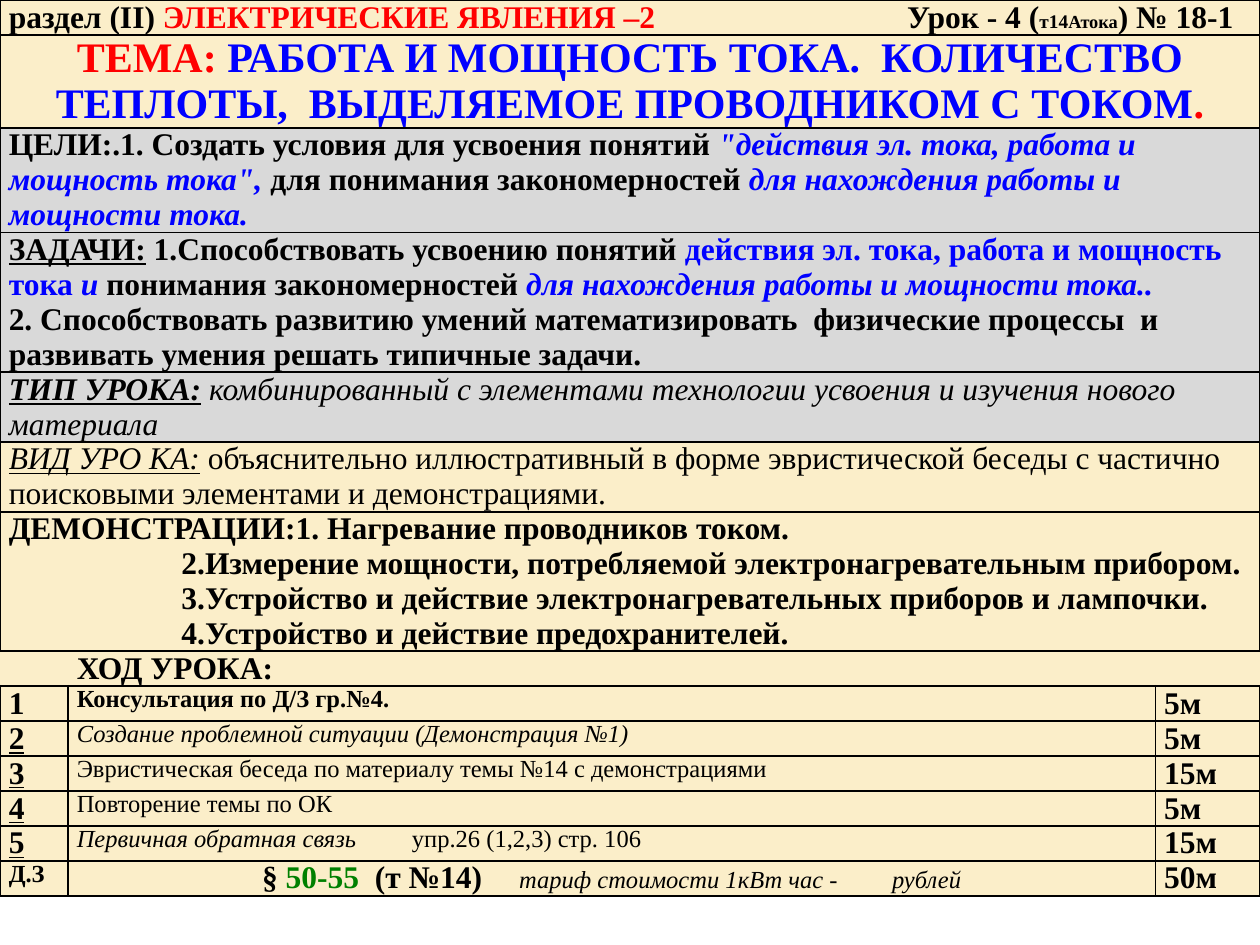
from dataclasses import dataclass

from lxml import etree
from pptx import Presentation
from pptx.dml.color import RGBColor
from pptx.enum.text import PP_ALIGN
from pptx.oxml.ns import qn
from pptx.util import Inches, Pt

CENTER = PP_ALIGN.CENTER
NO_STYLE = "{2D5ABB26-0587-4C30-8999-92F81FD0307C}"


@dataclass(frozen=True)
class Theme:
    font: str = "Times New Roman"
    black: str = "000000"
    red: str = "FF0000"
    blue: str = "0000FF"
    green: str = "008000"
    cream: str = "FBEEC9"
    gray: str = "D9D9D9"
    title: float = 24
    body: float = 18
    step: float = 14
    note: float = 11
    small_note: float = 10.5
    thin: float = 1
    thick: float = 1.5


THEME = Theme()
THIN, THICK = THEME.thin, THEME.thick
COLUMNS = (0.54, 8.63, 0.83)
LINE_HEIGHT = 0.18

BLUE = dict(color=THEME.blue)
BLUE_ITALIC = dict(color=THEME.blue, italic=True)
PLAIN = dict(bold=False)
ITALIC = dict(bold=False, italic=True)
STEP = dict(size=THEME.step, bold=False)
STEP_ITALIC = dict(size=THEME.step, bold=False, italic=True)
UNDERLINE = dict(underline=True)

# A paragraph is (spans, layout); a span is (text, format).
HEADER = [([("раздел (II) ", {}), ("ЭЛЕКТРИЧЕСКИЕ ЯВЛЕНИЯ –2", dict(color=THEME.red)),
            ("\tУрок - 4 (", {}), ("т14", dict(size=THEME.note)),
            (" Атока", dict(size=THEME.small_note)), (") № 18-1", {})], dict(tabs=(7.13,)))]
# The second note keeps its own type size, so it is a separate span.
HEADER[0][0][4] = (" Атока".replace(" А", "А", 1), dict(size=THEME.small_note))
TOPIC = [([("ТЕМА: ", dict(size=THEME.title, color=THEME.red)),
           ("РАБОТА И МОЩНОСТЬ ТОКА.  КОЛИЧЕСТВО ТЕПЛОТЫ,  ВЫДЕЛЯЕМОЕ ПРОВОДНИКОМ С ТОКОМ",
            dict(size=THEME.title, color=THEME.blue)),
           (".", dict(size=THEME.title, color=THEME.red))], dict(align=CENTER))]
GOALS = [([("ЦЕЛИ:.1. Создать условия для усвоения понятий ", {}),
           ("\"действия эл. тока, работа и мощность тока\", ", BLUE_ITALIC),
           ("для понимания закономерностей ", {}),
           ("для нахождения работы и мощности тока.", BLUE_ITALIC)], {})]
TASKS = [([("ЗАДАЧИ:", UNDERLINE), (" 1.Способствовать усвоению понятий ", {}),
           ("действия эл. тока, работа и мощность тока", BLUE), (" и ", BLUE_ITALIC),
           ("понимания закономерностей", {}),
           (" для нахождения работы и мощности тока..", BLUE_ITALIC)], {}),
         ([("2. Способствовать развитию умений математизировать  физические процессы  и "
            "развивать умения решать типичные задачи.", {})], {})]
LESSON_TYPE = [([("ТИП УРОКА:", dict(italic=True, underline=True)),
                 (" комбинированный с элементами технологии усвоения и изучения нового "
                  "материала", ITALIC)], {})]
LESSON_FORM = [([("ВИД УРО КА:", dict(bold=False, italic=True, underline=True)),
                 (" объяснительно иллюстративный в форме эвристической беседы с частично "
                  "поисковыми элементами и демонстрациями.", PLAIN)], {})]
DEMOS = [([("ДЕМОНСТРАЦИИ:1. Нагревание проводников током.", {})], {})] + [
    ([(text, {})], dict(indent=1.37)) for text in (
        "2.Измерение мощности, потребляемой электронагревательным прибором.",
        "3.Устройство и действие электронагревательных приборов и лампочки.",
        "4.Устройство и действие предохранителей.")]

# Full-width rows: paragraphs, lines, fill, side, top and bottom border.
SECTIONS = [
    (HEADER, 1, THEME.cream, THIN, THIN, THICK),
    (TOPIC, 2, THEME.cream, THICK, THICK, THICK),
    (GOALS, 3, THEME.gray, THIN, THICK, THIN),
    (TASKS, 4, THEME.gray, THIN, THIN, THIN),
    (LESSON_TYPE, 2, THEME.gray, THIN, THIN, THIN),
    (LESSON_FORM, 2, THEME.cream, THIN, THIN, THICK),
    (DEMOS, 4, THEME.cream, THICK, THICK, THICK),
]

# Lesson steps: number with format, spans, layout, duration.
STEPS = [
    ("1", {}, [("Консультация по Д/З гр.№4.", dict(size=THEME.step))], {}, "5м"),
    ("2", UNDERLINE, [("Создание проблемной ситуации (Демонстрация №1)", STEP_ITALIC)], {}, "5м"),
    ("3", UNDERLINE, [("Эвристическая беседа по материалу темы №14 с демонстрациями", STEP)],
     {}, "15м"),
    ("4", UNDERLINE, [("Повторение темы по ОК", STEP)], {}, "5м"),
    ("5", UNDERLINE, [("Первичная обратная связь", STEP_ITALIC),
                      ("\tупр.26 (1,2,3) стр. 106", STEP)], dict(tabs=(2.66,)), "15м"),
    ("Д.З", dict(size=THEME.step),
     [("\t§ ", {}), ("50-55", dict(color=THEME.green)), ("  (т №14)", {}),
      ("\tтариф стоимости 1кВт час -\tрублей", STEP_ITALIC)],
     dict(tabs=(1.47, 3.51, 6.47)), "50м"),
]


def add_span(para, text, size=THEME.body, color=THEME.black, bold=True, italic=False,
             underline=False):
    span = para.add_run()
    span.text = text
    font = span.font
    font.name, font.size = THEME.font, Pt(size)
    font.bold, font.italic, font.underline = bold, italic, underline
    font.color.rgb = RGBColor.from_string(color)


def lay_out(para, align=None, indent=0, tabs=()):
    """Set alignment, left indent and tab stops, in inches."""
    if align is not None:
        para.alignment = align
    props = para._p.get_or_add_pPr()
    props.set("marL", str(Inches(indent)))
    if tabs:
        stops = etree.SubElement(props, qn("a:tabLst"))
        for stop in tabs:
            etree.SubElement(stops, qn("a:tab"), pos=str(Inches(stop)), algn="l")


def set_borders(cell, **widths):
    props = cell._tc.get_or_add_tcPr()
    for side in "LRTB":
        width = widths.get(side, 0)
        line = etree.SubElement(props, qn(f"a:ln{side}"), w=str(Pt(width)))
        if width:
            fill = etree.SubElement(line, qn("a:solidFill"))
            etree.SubElement(fill, qn("a:srgbClr"), val=THEME.black)
        else:
            etree.SubElement(line, qn("a:noFill"))


def fill_cell(cell, paragraphs, color, **widths):
    cell.margin_left = cell.margin_right = Inches(0.07)
    cell.margin_top = cell.margin_bottom = 0
    set_borders(cell, **widths)
    cell.fill.solid()
    cell.fill.fore_color.rgb = RGBColor.from_string(color)
    frame = cell.text_frame
    for index, (spans, layout) in enumerate(paragraphs):
        para = frame.add_paragraph() if index else frame.paragraphs[0]
        lay_out(para, **layout)
        for text, style in spans:
            add_span(para, text, **style)
    if not paragraphs:
        etree.SubElement(frame.paragraphs[0]._p, qn("a:endParaRPr"), sz=str(THEME.step * 100))


def fill_sections(table):
    for row, (paragraphs, lines, color, side, top, bottom) in enumerate(SECTIONS):
        table.rows[row].height = Inches(LINE_HEIGHT * lines)
        cell = table.cell(row, 0)
        cell.merge(table.cell(row, len(COLUMNS) - 1))
        fill_cell(cell, paragraphs, color, L=side, R=side, T=top, B=bottom)


def fill_steps(table, first):
    """Fill the heading row and the numbered steps below it."""
    heading = ([], [([("ХОД УРОКА:", {})], {})], [])
    for column, paragraphs in enumerate(heading):
        fill_cell(table.cell(first, column), paragraphs, THEME.cream, T=THICK, B=THICK)
    last = len(STEPS) - 1
    for index, (number, style, spans, layout, duration) in enumerate(STEPS):
        homework = index == last
        top = THICK if index in (0, last) else THIN
        bottom = THICK if index >= last - 1 else THIN
        edges = (THICK, THIN, THIN, THICK) if homework else (THICK, THICK, THIN, THIN)
        contents = ([(number, style)], {}), (spans, layout), ([(duration, {})], {})
        for column, paragraph in enumerate(contents):
            fill_cell(table.cell(first + 1 + index, column), [paragraph], THEME.cream,
                      L=edges[column], R=edges[column + 1], T=top, B=bottom)


def add_lesson_plan(page, left, top, width, height):
    rows = len(SECTIONS) + 1 + len(STEPS)
    box = page.shapes.add_table(rows, len(COLUMNS), left, top, width, height)
    table = box.table
    table.first_row = table.horz_banding = False
    table._tbl.tblPr.find(qn("a:tableStyleId")).text = NO_STYLE
    for column, size in zip(table.columns, COLUMNS):
        column.width = Inches(size)
    for row in table.rows:
        row.height = Inches(LINE_HEIGHT)
    fill_sections(table)
    fill_steps(table, len(SECTIONS))
    box.height = height


def main():
    deck = Presentation()
    deck.slide_width, deck.slide_height = Inches(10), Inches(7.5)
    page = deck.slides.add_slide(deck.slide_layouts[6])
    add_lesson_plan(page, 0, 0, Inches(10), Inches(7.7))
    deck.save("out.pptx")


if __name__ == "__main__":
    main()
